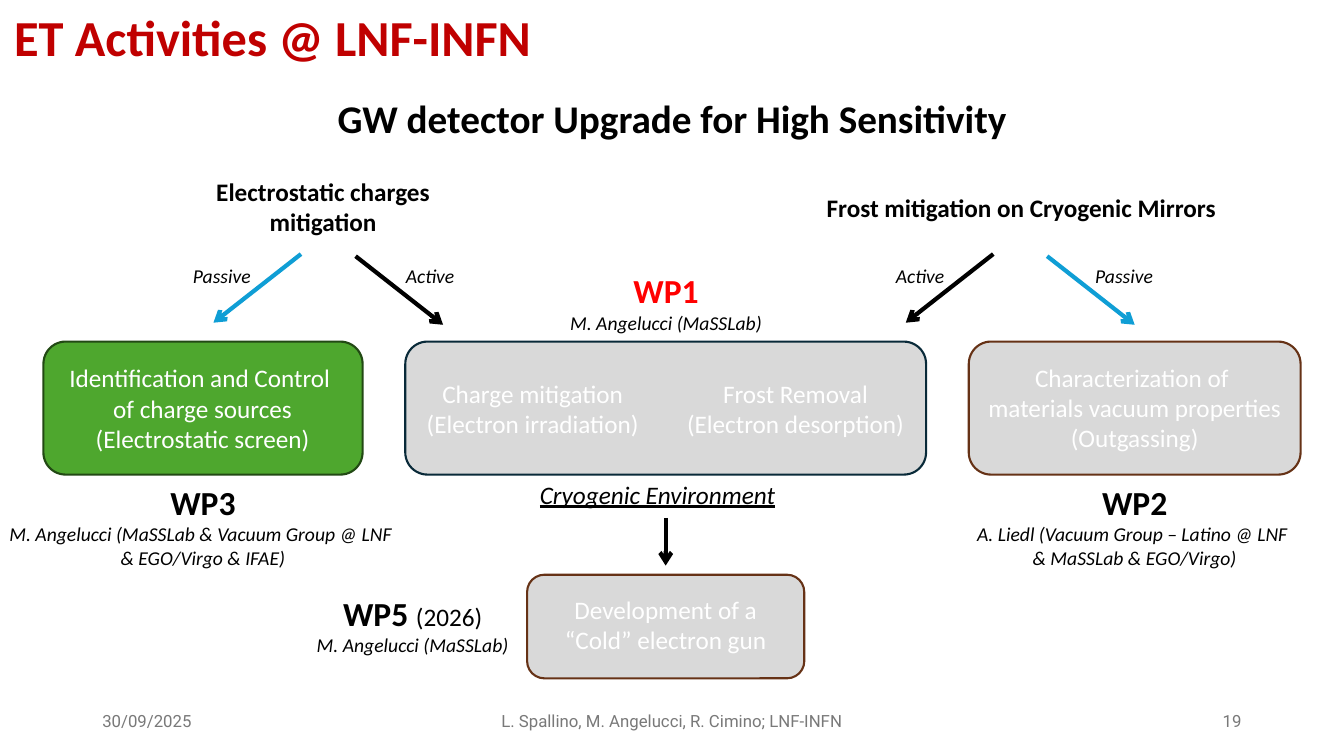
"""Build the slide on ET activities and work packages at LNF-INFN."""
from lxml import etree
from pptx import Presentation
from pptx import util as u
from pptx.dml.color import RGBColor
from pptx.enum import shapes, text
from pptx.oxml import ns

COLORS = {
    "black": "000000", "white": "FFFFFF", "title": "C00000", "red": "FF0000",
    "footer": "797979", "gray": "D9D9D9", "green": "4EA72E", "brown": "663216",
    "dark green": "224914", "navy": "092A39", "blue": "0F9ED5",
}
LEFT, CENTER, RIGHT = text.PP_ALIGN.LEFT, text.PP_ALIGN.CENTER, text.PP_ALIGN.RIGHT

deck = Presentation()
deck.slide_width, deck.slide_height = u.Pt(960), u.Pt(540)
page = deck.slides.add_slide(deck.slide_layouts[6])


def color(name):
    return RGBColor.from_string(COLORS[name])


def write(words, place, size=18, ink="black", font="Calibri", bold=False, italic=False,
          underline=None, align=CENTER, wrap=False, fixed=False, spacing=None,
          year="", credit=""):
    """Add a text box; year follows the first line, credit goes below in small italics."""
    box = page.shapes.add_textbox(*map(u.Pt, place))
    frame = box.text_frame
    frame.word_wrap = wrap
    frame.auto_size = text.MSO_AUTO_SIZE.NONE if fixed else text.MSO_AUTO_SIZE.SHAPE_TO_FIT_TEXT
    frame.vertical_anchor = text.MSO_ANCHOR.MIDDLE if fixed else text.MSO_ANCHOR.TOP
    lines = [[(line, size, ink, bold, italic)] for line in words.split("\n")]
    if year:
        lines[0].append((year, 18, "black", False, False))
    if credit:
        lines += [[(line, 14, "black", False, True)] for line in credit.split("\n")]
    for index, line in enumerate(lines):
        para = frame.add_paragraph() if index else frame.paragraphs[0]
        para.alignment = align
        para.line_spacing = spacing
        for content, points, tint, heavy, slanted in line:
            span = para.add_run()
            span.text = content
            span.font.name, span.font.size = font, u.Pt(points)
            span.font.bold, span.font.italic = heavy, slanted
            span.font.underline = underline
            span.font.color.rgb = color(tint)


panels = [
    ((692, 244, 237, 95), "gray", "brown"),
    ((31, 244, 228, 95), "green", "dark green"),
    ((289.5, 244, 372, 95), "gray", "navy"),
    ((376.5, 410.5, 198, 74), "gray", "brown"),
]
for place, fill, edge in panels:
    panel = page.shapes.add_shape(shapes.MSO_SHAPE.ROUNDED_RECTANGLE, *map(u.Pt, place))
    panel.shadow.inherit = False
    panel.fill.solid()
    panel.fill.fore_color.rgb = color(fill)
    panel.line.color.rgb = color(edge)
    panel.line.width = u.Pt(1.5)

write("ET Activities @ LNF-INFN", (3, 3, 828, 51), size=36, ink="title", bold=True,
      align=LEFT, wrap=True, fixed=True, spacing=0.9)
write("GW detector Upgrade for High Sensitivity", (231, 63.5, 498, 41), size=28, bold=True)
write("Frost mitigation on Cryogenic Mirrors", (582, 133.5, 295, 29), bold=True)
write("Electrostatic charges mitigation", (108, 122.5, 245.5, 51), bold=True, wrap=True)
write("Cryogenic Environment", (378.5, 338.5, 186.5, 29), italic=True, underline=True, align=LEFT)

panel_texts = [
    ("Characterization of \nmaterials vacuum properties\n(Outgassing)", (697.5, 255, 226, 73)),
    ("Identification and Control \nof charge sources\n(Electrostatic screen)", (41, 255.5, 207.5, 73)),
    ("Frost Removal\n(Electron desorption)", (482.5, 266.5, 171.5, 51)),
    ("Charge mitigation\n(Electron irradiation)", (296.5, 266.5, 168, 51)),
    ("Development of a\n“Cold” electron gun", (395.5, 421, 160, 51)),
]
for words, place in panel_texts:
    write(words, place, ink="white")

work_packages = [
    ("WP1", "", "M. Angelucci (MaSSLab)", "red", (399, 189.5, 153.5, 53)),
    ("WP2", "", "A. Liedl (Vacuum Group – Latino @ LNF \n& MaSSLab & EGO/Virgo)", "black",
     (690, 340.5, 241, 70.5)),
    ("WP3", "", "M. Angelucci (MaSSLab & Vacuum Group @ LNF \n& EGO/Virgo & IFAE)", "black",
     (-2, 340.5, 294, 70.5)),
    ("WP5 ", "(2026)", "M. Angelucci (MaSSLab)", "black", (218, 420, 153.5, 53)),
]
for name, year, credit, ink, place in work_packages:
    write(name, place, size=24, ink=ink, bold=True, year=year, credit=credit)

for words, left, width in [("Passive", 775, 56), ("Active", 632, 50.5),
                           ("Passive", 130.5, 56), ("Active", 282, 50.5)]:
    write(words, (left, 185, width, 24.5), size=14, italic=True)

arrows = [
    ((748, 183, 810.5, 232), "blue"),
    ((709.5, 181.5, 647, 230.5), "black"),
    ((254, 183, 316.5, 232), "black"),
    ((215, 181.5, 152.5, 230.5), "blue"),
    ((475.5, 370, 475.5, 404), "black"),
]
for ends, ink in arrows:
    arrow = page.shapes.add_connector(shapes.MSO_CONNECTOR.STRAIGHT, *map(u.Pt, ends))
    arrow.line.color.rgb = color(ink)
    arrow.line.width = u.Pt(3)
    etree.SubElement(arrow.line._get_or_add_ln(), ns.qn("a:tailEnd"), type="arrow")
    etree.SubElement(arrow._element.spPr, ns.qn("a:effectLst"))

for words, left, width, align in [
        ("30/09/2025", 66, 216, LEFT),
        ("L. Spallino, M. Angelucci, R. Cimino; LNF-INFN", 318, 324, CENTER),
        ("19", 678, 216, RIGHT)]:
    write(words, (left, 500.5, width, 29), size=12, ink="footer", font="Roboto",
          align=align, wrap=True, fixed=True)

deck.save("out.pptx")
